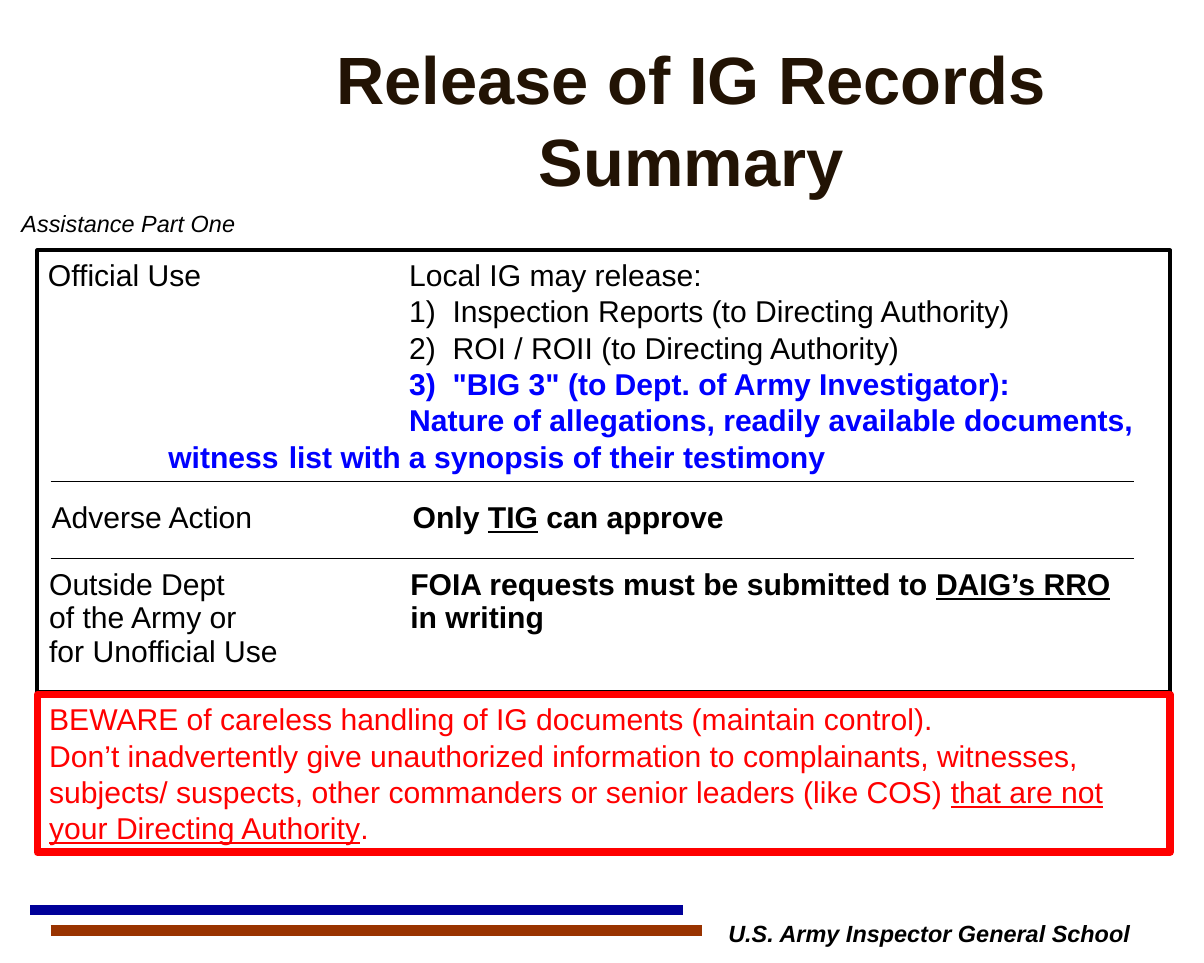
from lxml import etree
from pptx import Presentation
from pptx.dml.color import RGBColor
from pptx.enum.shapes import MSO_CONNECTOR, MSO_SHAPE
from pptx.enum.text import MSO_ANCHOR, PP_ALIGN
from pptx.oxml.ns import qn
from pptx.util import Inches, Pt

STRAIGHT = MSO_CONNECTOR.STRAIGHT
RECTANGLE = MSO_SHAPE.RECTANGLE
TOP = MSO_ANCHOR.TOP
LEFT, CENTER = PP_ALIGN.LEFT, PP_ALIGN.CENTER

BLACK, RED, BLUE = "000000", "FF0000", "0000FF"
ANSWER_COLUMN = (3,)


def color(hex_text):
    return RGBColor.from_string(hex_text)


class SlideBuilder:
    font = "Arial"

    def __init__(self, page):
        self.page = page

    def line(self, left, right, y, line_color, width):
        connector = self.page.shapes.add_connector(
            STRAIGHT, Inches(left), Inches(y), Inches(right), Inches(y))
        connector.line.color.rgb = color(line_color)
        connector.line.width = Pt(width)
        etree.SubElement(connector._element.spPr, qn("a:effectLst"))

    def frame(self, left, top, width, height, line_color, line_width):
        box = self.page.shapes.add_shape(
            RECTANGLE, Inches(left), Inches(top), Inches(width), Inches(height))
        box.shadow.inherit = False
        box.fill.background()
        box.line.color.rgb = color(line_color)
        box.line.width = Pt(line_width)
        return box

    def text(self, left, top, width, height, paragraphs, **style):
        box = self.page.shapes.add_textbox(
            Inches(left), Inches(top), Inches(width), Inches(height))
        self.fill_text(box, paragraphs, **style)

    def title(self, left, top, width, height, paragraphs, **style):
        box = self.page.shapes.title
        box.left, box.top = Inches(left), Inches(top)
        box.width, box.height = Inches(width), Inches(height)
        self.fill_text(box, paragraphs, **style)

    def fill_text(self, box, paragraphs, size=18, text_color=BLACK, align=LEFT,
                  spacing=None, tabs=()):
        """Fill a box; each paragraph is a list of (text, flags), flags from b, i, u."""
        frame = box.text_frame
        frame.word_wrap = True
        frame.vertical_anchor = TOP
        frame.margin_left = frame.margin_right = Inches(0.1)
        frame.margin_top = frame.margin_bottom = Inches(0.05)
        for index, spans in enumerate(paragraphs):
            para = frame.add_paragraph() if index else frame.paragraphs[0]
            para.alignment = align
            para.space_before = Pt(0)
            if spacing:
                para.line_spacing = Pt(spacing)
            if tabs:
                tab_list = etree.SubElement(para._p.get_or_add_pPr(), qn("a:tabLst"))
                for stop in tabs:
                    etree.SubElement(tab_list, qn("a:tab"), pos=str(Inches(stop)), algn="l")
            for words, flags in spans:
                span = para.add_run()
                span.text = words
                span.font.name = self.font
                span.font.size = Pt(size)
                span.font.bold = "b" in flags
                span.font.italic = "i" in flags
                span.font.underline = "u" in flags
                # A "blue" span overrides the color of its box
                span.font.color.rgb = color(BLUE if "blue" in flags else text_color)


def main():
    deck = Presentation()
    deck.slide_width, deck.slide_height = Inches(10), Inches(8)
    page = deck.slides.add_slide(deck.slide_layouts[5])
    builder = SlideBuilder(page)

    builder.title(1.49, 0.25, 8.5, 1.39,
                  [[("Release of IG Records", "b")], [("Summary", "b")]],
                  size=40, text_color="221304", align=CENTER, spacing=49)
    builder.text(0.08, 1.69, 4.5, 0.53, [[("Assistance Part One", "i")]], size=14)

    builder.line(0.25, 5.67, 7.56, "000099", 6)
    builder.line(0.42, 5.83, 7.73, "993300", 6)
    builder.text(5.47, 7.59, 4.5, 0.4,
                 [[("U.S. Army Inspector General School", "bi")]],
                 size=14, align=CENTER)

    builder.frame(0.31, 2.08, 9.41, 3.67, BLACK, 2.25)
    for y in (4, 4.64):
        builder.line(0.42, 9.42, y, BLACK, 1)

    strong_blue = ("b", "blue")
    builder.text(0.3, 2.08, 9.38, 1.6, [
        [("Official Use\tLocal IG may release:", "")],
        [("\t1)  Inspection Reports (to Directing Authority)", "")],
        [("\t2)  ROI / ROII (to Directing Authority)", "")],
        [("\t3)  \"BIG 3\" (to Dept. of Army Investigator):", strong_blue)],
        [("\tNature of allegations, readily available documents,", strong_blue)],
    ], spacing=21.7, tabs=ANSWER_COLUMN)
    builder.text(0.3, 3.59, 9.38, 0.4, [
        [("\twitness\tlist with a synopsis of their testimony", strong_blue)],
    ], spacing=21.7, tabs=(1, 2))

    builder.text(0.33, 4.09, 9.33, 0.4, [
        [("Adverse Action\t", ""), ("Only ", "b"), ("TIG", "bu"), (" can approve", "b")],
    ], spacing=21.7, tabs=ANSWER_COLUMN)

    builder.text(0.31, 4.67, 9.41, 0.94, [
        [("Outside Dept\t", ""), ("FOIA requests must be submitted to ", "b"),
         ("DAIG’s RRO", "bu")],
        [("of the Army or\t", ""), ("in writing", "b")],
        [("for Unofficial Use", "")],
    ], spacing=20, tabs=ANSWER_COLUMN)

    warning = builder.frame(0.31, 5.77, 9.41, 1.31, RED, 4.5)
    builder.fill_text(warning, [
        [("BEWARE of careless handling of IG documents (maintain control).", "")],
        [("Don’t inadvertently give unauthorized information to complainants, "
          "witnesses, subjects/ suspects, other commanders or senior leaders "
          "(like COS) ", ""),
         ("that are not your Directing Authority", "u"), (".", "")],
    ], text_color=RED, spacing=21.7)

    deck.save("out.pptx")


if __name__ == "__main__":
    main()
